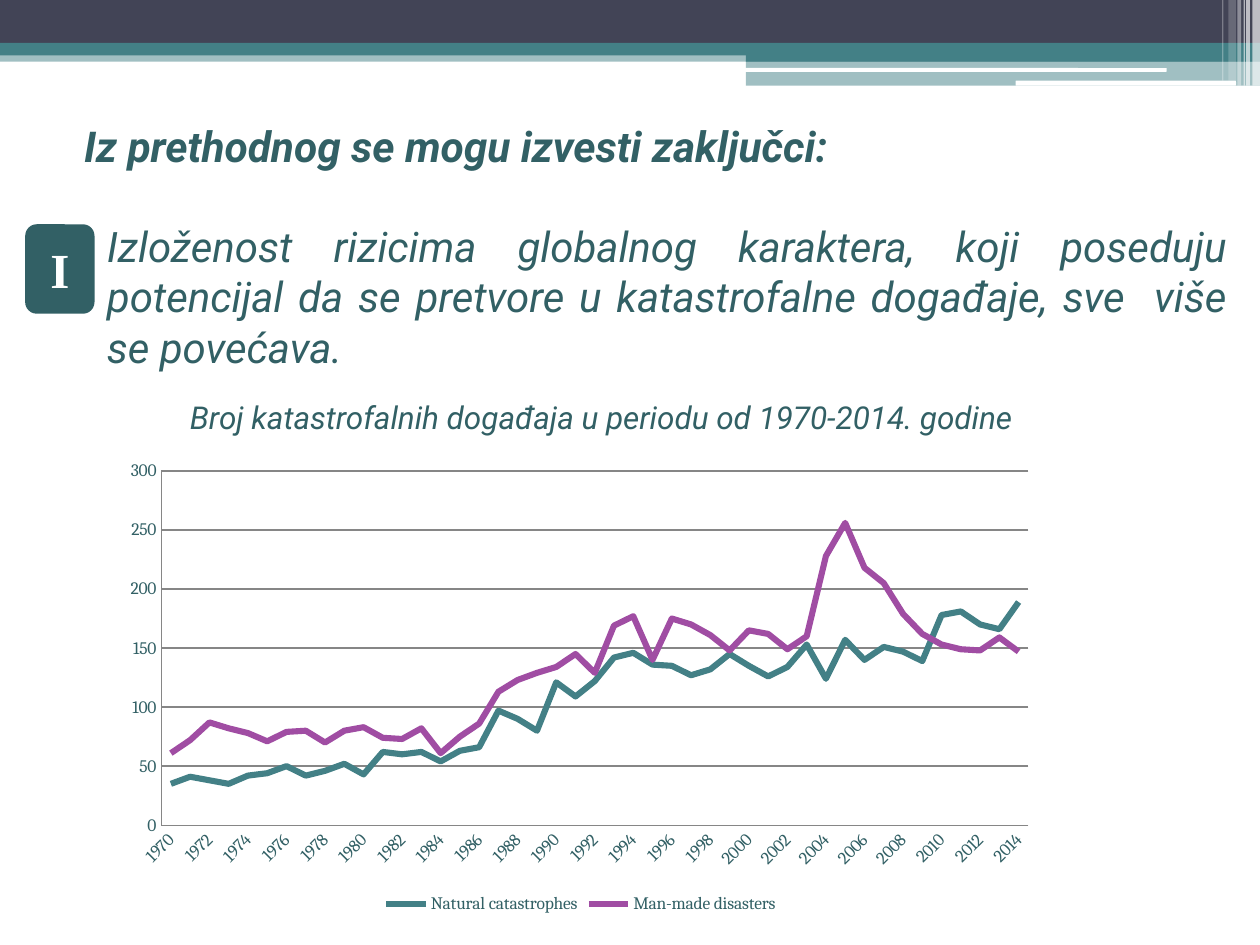
from typing import NamedTuple

from lxml import etree
from pptx import Presentation
from pptx.chart.data import CategoryChartData
from pptx.dml.color import RGBColor
from pptx.enum.chart import XL_CHART_TYPE, XL_LEGEND_POSITION, XL_TICK_MARK
from pptx.enum.shapes import MSO_SHAPE
from pptx.enum.text import MSO_ANCHOR, PP_ALIGN
from pptx.oxml import parse_xml
from pptx.oxml.ns import nsdecls, qn
from pptx.util import Inches, Pt

RECT, ROUND = MSO_SHAPE.RECTANGLE, MSO_SHAPE.ROUNDED_RECTANGLE
LEFT, CENTER, JUSTIFY = PP_ALIGN.LEFT, PP_ALIGN.CENTER, PP_ALIGN.JUSTIFY
TOP, MIDDLE = MSO_ANCHOR.TOP, MSO_ANCHOR.MIDDLE
NO_TICKS = XL_TICK_MARK.NONE

COLORS = {"navy": "424456", "teal": "438086", "ink": "326065",
          "purple": "A04DA3", "white": "FFFFFF", "grid": "868686"}

# The slide is a grid of 100 columns by 75 rows
COLS, ROWS = 100, 75
CELL = Inches(10) // COLS


class Box(NamedTuple):
    col: float
    row: float
    cols: float
    rows: float

    def emu(self) -> list[int]:
        return [round(v * CELL) for v in self]


class Bar(NamedTuple):
    box: Box
    color: str
    opacity: int = 100
    kind: int = RECT


class Label(NamedTuple):
    box: Box
    text: str
    size: float
    align: int = LEFT
    anchor: int = TOP
    bold: bool = False
    indent: float = 0


class Series(NamedTuple):
    name: str
    color: str
    values: list[int]


BARS = [
    Bar(Box(0, 4, COLS, 0.9), "teal", 50),
    Bar(Box(0, 0, COLS, 3.4), "navy"),
    Bar(Box(0, 3.4, COLS, 1), "teal"),
    Bar(Box(59.2, 3.9, 40.8, 1), "teal"),
    Bar(Box(59.2, 4.8, 40.8, 2), "teal", 50),
    Bar(Box(59.1, 5.4, 33.5, 0.3), "white", kind=ROUND),
    Bar(Box(80.6, 6.4, 17.5, 0.4), "white", kind=ROUND),
]
# Corner stripes: column, width, height, opacity
STRIPES = [(99.4, 0.6, 6.8, 65), (98.9, 0.3, 6.8, 65), (98.7, 0.1, 6.8, 60),
           (98.2, 0.3, 6.8, 40), (97.5, 0.6, 6.4, 20), (97, 0.1, 6.4, 30)]
BARS += [Bar(Box(c, 0, w, h), "white", a) for c, w, h, a in STRIPES]

LABELS = [
    Label(Box(5.7, 9.2, 90, 4.7), "Iz prethodnog se mogu izvesti zaključci:", 24.3,
          anchor=MIDDLE, bold=True),
    Label(Box(6.3, 17, 92.1, 11.8),
          "Izloženost rizicima globalnog karaktera, koji poseduju potencijal da se "
          "pretvore u katastrofalne događaje, sve  više se povećava.",
          24, JUSTIFY, indent=1.2),
    Label(Box(7.5, 31.1, 80.5, 4),
          "Broj katastrofalnih događaja u periodu od 1970-2014. godine", 18, CENTER),
]

BADGE = Box(2, 17.8, 5.5, 7.1)
CHART = Box(9.1, 35.9, 74, 37)
PLOT = {"x": 0.05, "y": 0.04, "w": 0.93, "h": 0.76}  # shares of the chart
YEARS = range(1970, 2015)
SERIES = [
    Series("Natural catastrophes", "teal", [
        35, 41, 38, 35, 42, 44, 50, 42, 46, 52, 43, 62, 60, 62, 54,
        63, 66, 97, 90, 80, 121, 109, 122, 142, 146, 136, 135, 127, 132, 145,
        135, 126, 134, 153, 124, 157, 140, 151, 147, 139, 178, 181, 170, 166, 189]),
    Series("Man-made disasters", "purple", [
        61, 72, 87, 82, 78, 71, 79, 80, 70, 80, 83, 74, 73, 82, 61,
        75, 86, 113, 123, 129, 134, 145, 129, 169, 177, 140, 175, 170, 161, 148,
        165, 162, 149, 160, 228, 256, 218, 205, 179, 162, 153, 149, 148, 159, 147]),
]


def rgb(name: str) -> RGBColor:
    return RGBColor.from_string(COLORS[name])


def set_font(font, name: str, size: float, color: str) -> None:
    font.name, font.size = name, Pt(size)
    font.color.rgb = rgb(color)


def add_bar(s, bar: Bar):
    sp = s.shapes.add_shape(bar.kind, *bar.box.emu())
    sp.shadow.inherit = False
    sp.line.fill.background()
    sp.fill.solid()
    sp.fill.fore_color.rgb = rgb(bar.color)
    if bar.opacity < 100:
        clr = sp.fill._xPr.find(".//" + qn("a:srgbClr"))
        etree.SubElement(clr, qn("a:alpha"), val=str(bar.opacity * 1000))
    return sp


def add_label(s, label: Label) -> None:
    tf = s.shapes.add_textbox(*label.box.emu()).text_frame
    tf.word_wrap = True
    tf.vertical_anchor = label.anchor
    p = tf.paragraphs[0]
    p.text, p.alignment = label.text, label.align
    set_font(p.font, "Roboto", label.size, "ink")
    p.font.italic, p.font.bold = True, label.bold
    if label.indent:
        p.space_before = Pt(3)
        p._p.get_or_add_pPr().set("marL", str(round(label.indent * CELL)))


def add_badge(s, box: Box, text: str) -> None:
    tf = add_bar(s, Bar(box, "ink", kind=ROUND)).text_frame
    tf.vertical_anchor = MIDDLE
    p = tf.paragraphs[0]
    p.text, p.alignment = text, CENTER
    set_font(p.font, "Times New Roman", 28, "white")
    p.font.bold = True


def add_line_chart(s, box: Box) -> None:
    data = CategoryChartData()
    data.categories = [str(year) for year in YEARS]
    for series in SERIES:
        data.add_series(series.name, series.values)
    chart = s.shapes.add_chart(XL_CHART_TYPE.LINE, *box.emu(), data).chart
    chart.has_title = False
    set_font(chart.font, "Cambria", 10, "ink")
    chart.has_legend = True
    chart.legend.position = XL_LEGEND_POSITION.BOTTOM
    chart.legend.include_in_layout = False
    set_font(chart.legend.font, "Cambria", 10, "ink")

    for line, series in zip(chart.plots[0].series, SERIES):
        line.smooth = False
        line.format.line.width = Pt(3.5)
        line.format.line.color.rgb = rgb(series.color)

    # Axes and gridlines
    cat, val = chart.category_axis, chart.value_axis
    for axis in (cat, val):
        axis.major_tick_mark = axis.minor_tick_mark = NO_TICKS
        axis.format.line.color.rgb = rgb("grid")
        set_font(axis.tick_labels.font, "Cambria", 10, "ink")
    val.minimum_scale, val.maximum_scale, val.major_unit = 0, 300, 50
    val.major_gridlines.format.line.color.rgb = rgb("grid")

    # Slanted labels on every second year
    cat._element.find(".//" + qn("a:bodyPr")).set("rot", "-2700000")
    skip = parse_xml(f'<c:tickLblSkip {nsdecls("c")} val="2"/>')
    cat._element.find(qn("c:noMultiLvlLbl")).addprevious(skip)

    # Fixed plot area
    area = chart._chartSpace.find(".//" + qn("c:plotArea"))
    for old in area.findall(qn("c:layout")):
        area.remove(old)
    modes = '<c:xMode val="edge"/><c:yMode val="edge"/>'
    shares = "".join(f'<c:{key} val="{share}"/>' for key, share in PLOT.items())
    area.insert(0, parse_xml(
        f'<c:layout {nsdecls("c")}><c:manualLayout><c:layoutTarget val="inner"/>'
        f'{modes}{shares}</c:manualLayout></c:layout>'))


def main() -> None:
    prs = Presentation()
    prs.slide_width, prs.slide_height = COLS * CELL, ROWS * CELL
    s = prs.slides.add_slide(prs.slide_layouts[6])
    for bar in BARS:
        add_bar(s, bar)
    for label in LABELS:
        add_label(s, label)
    add_badge(s, BADGE, "I")
    add_line_chart(s, CHART)
    prs.save("out.pptx")


if __name__ == "__main__":
    main()
